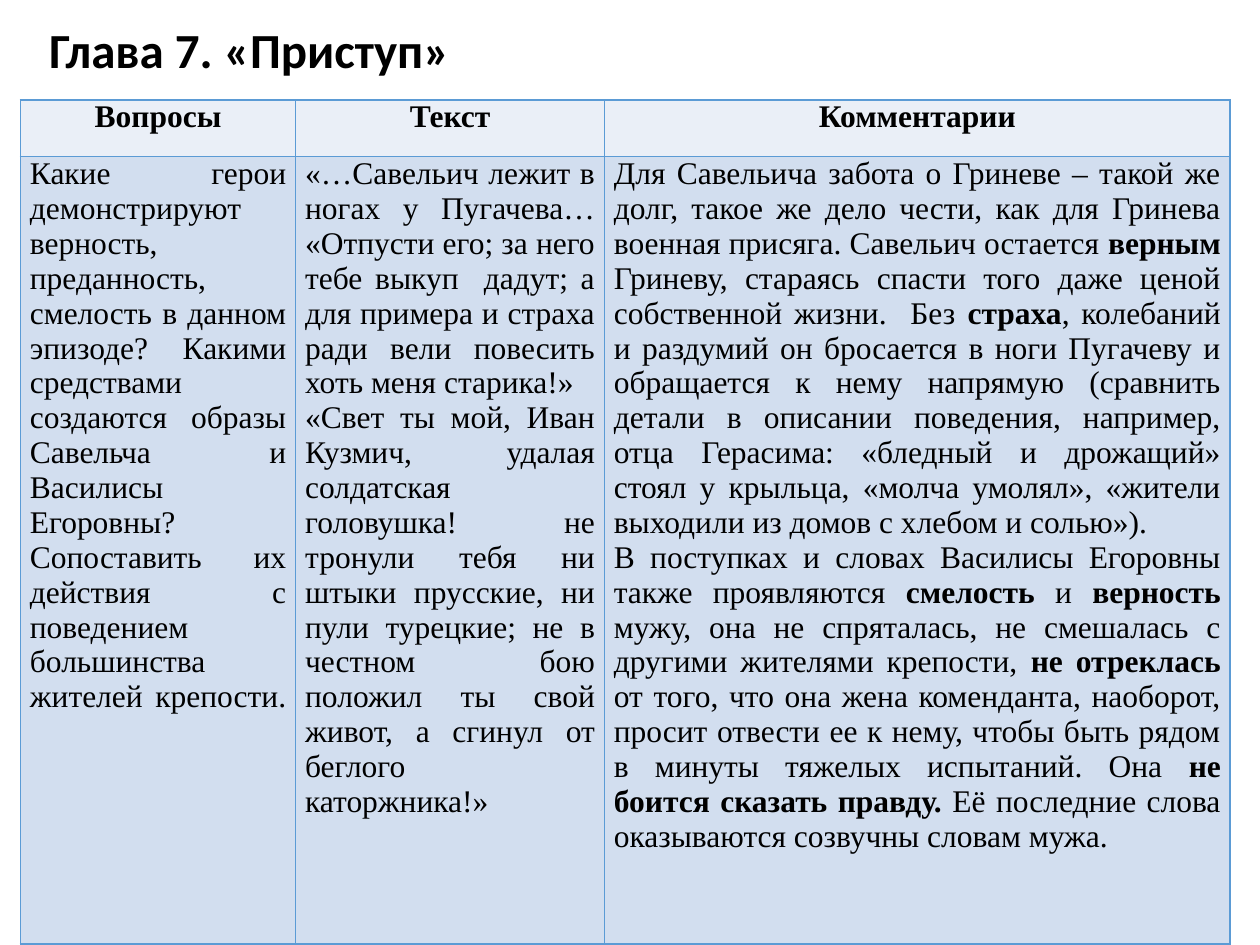
from lxml import etree
from pptx import Presentation
from pptx.dml.color import RGBColor
from pptx.enum.text import MSO_ANCHOR, PP_ALIGN
from pptx.oxml.ns import qn
from pptx.util import Pt

MIDDLE = MSO_ANCHOR.MIDDLE
CENTER, JUSTIFY = PP_ALIGN.CENTER, PP_ALIGN.JUSTIFY

THEME = {
    "ink": "000000", "paper": "FFFFFF", "line": "5B9BD5",
    "head": "EAEFF7", "body": "D2DEEF",
    "title_font": "Calibri", "title_size": 28,
    "cell_font": "Times New Roman", "cell_size": 18,
}

TITLE = "Глава 7. «Приступ»"
HEADS = ["Вопросы", "Текст", "Комментарии"]
# Each cell is a list of paragraphs; words between asterisks are bold.
BODY = [
    ["Какие герои демонстрируют верность, преданность, смелость в данном "
     "эпизоде? Какими средствами создаются образы Савельча и Василисы "
     "Егоровны? Сопоставить их действия с поведением большинства жителей "
     "крепости. "],
    ["«…Савельич лежит в ногах у Пугачева… «Отпусти его; за него тебе "
     "выкуп  дадут; а для примера и страха ради вели повесить хоть меня "
     "старика!»",
     "«Свет ты мой, Иван Кузмич, удалая солдатская головушка! не тронули "
     "тебя ни штыки прусские, ни пули турецкие; не в честном бою положил "
     "ты свой живот, а сгинул от беглого каторжника!»"],
    ["Для Савельича забота о Гриневе – такой же долг, такое же дело чести, "
     "как для Гринева военная присяга. Савельич остается *верным* Гриневу, "
     "стараясь спасти того даже ценой собственной жизни.  Без *страха*, "
     "колебаний и раздумий он бросается в ноги Пугачеву и обращается к нему "
     "напрямую (сравнить детали в описании поведения, например, отца "
     "Герасима: «бледный и дрожащий» стоял у крыльца, «молча умолял», "
     "«жители выходили из домов с хлебом и солью»). ",
     "В поступках и словах Василисы Егоровны также проявляются *смелость* и "
     "*верность* мужу, она не спряталась, не смешалась с другими жителями "
     "крепости, *не отреклась* от того, что она жена коменданта, наоборот, "
     "просит отвести ее к нему, чтобы быть рядом в минуты тяжелых испытаний. "
     "Она *не боится сказать правду.* Её последние слова оказываются "
     "созвучны словам мужа. "],
]
ROWS = [
    {"cells": [[f"*{head}*"] for head in HEADS], "fill": "head",
     "align": CENTER, "height": 32.5},
    {"cells": BODY, "fill": "body", "align": JUSTIFY, "height": 450},
]
WIDTHS = [157.3, 176.4, 357.6]
LEFT, TOP = 11.7, 57


def color(name):
    return RGBColor.from_string(THEME[name])


def style(font, kind):
    font.name = THEME[kind + "_font"]
    font.size = Pt(THEME[kind + "_size"])
    font.color.rgb = color("ink")


def add_title(slide):
    box = slide.shapes.add_textbox(Pt(21), Pt(13), Pt(671), Pt(34))
    box.fill.solid()
    box.fill.fore_color.rgb = color("paper")
    frame = box.text_frame
    frame.word_wrap = True
    frame.vertical_anchor = MIDDLE
    para = frame.paragraphs[0]
    para.text = TITLE
    para.line_spacing = 0.9
    style(para.font, "title")
    para.font.bold = True


def add_border(cell):
    props = cell._tc.get_or_add_tcPr()
    for spot, side in enumerate(("lnL", "lnR", "lnT", "lnB")):
        line = etree.Element(qn("a:" + side), w=str(Pt(1)))
        fill = etree.SubElement(line, qn("a:solidFill"))
        etree.SubElement(fill, qn("a:srgbClr"), val=THEME["line"])
        props.insert(spot, line)


def fill_cell(cell, texts, row):
    cell.margin_left = cell.margin_right = Pt(5.4)
    cell.margin_top = cell.margin_bottom = 0
    cell.fill.solid()
    cell.fill.fore_color.rgb = color(row["fill"])
    add_border(cell)
    frame = cell.text_frame
    for num, text in enumerate(texts):
        para = frame.add_paragraph() if num else frame.paragraphs[0]
        para.alignment = row["align"]
        style(para.font, "cell")
        for part, words in enumerate(text.split("*")):
            if words:
                run = para.add_run()
                run.text = words
                style(run.font, "cell")
                run.font.bold = part % 2 == 1


def add_grid(slide):
    high = sum(row["height"] for row in ROWS)
    table = slide.shapes.add_table(
        len(ROWS), len(WIDTHS), Pt(LEFT), Pt(TOP), Pt(sum(WIDTHS)), Pt(high)
    ).table
    for col, width in zip(table.columns, WIDTHS):
        col.width = Pt(width)
    for num, row in enumerate(ROWS):
        table.rows[num].height = Pt(row["height"])
        for col, texts in enumerate(row["cells"]):
            fill_cell(table.cell(num, col), texts, row)


def main():
    deck = Presentation()
    deck.slide_width, deck.slide_height = Pt(720), Pt(540)
    slide = deck.slides.add_slide(deck.slide_layouts[6])
    add_title(slide)
    add_grid(slide)
    deck.save("out.pptx")


if __name__ == "__main__":
    main()
